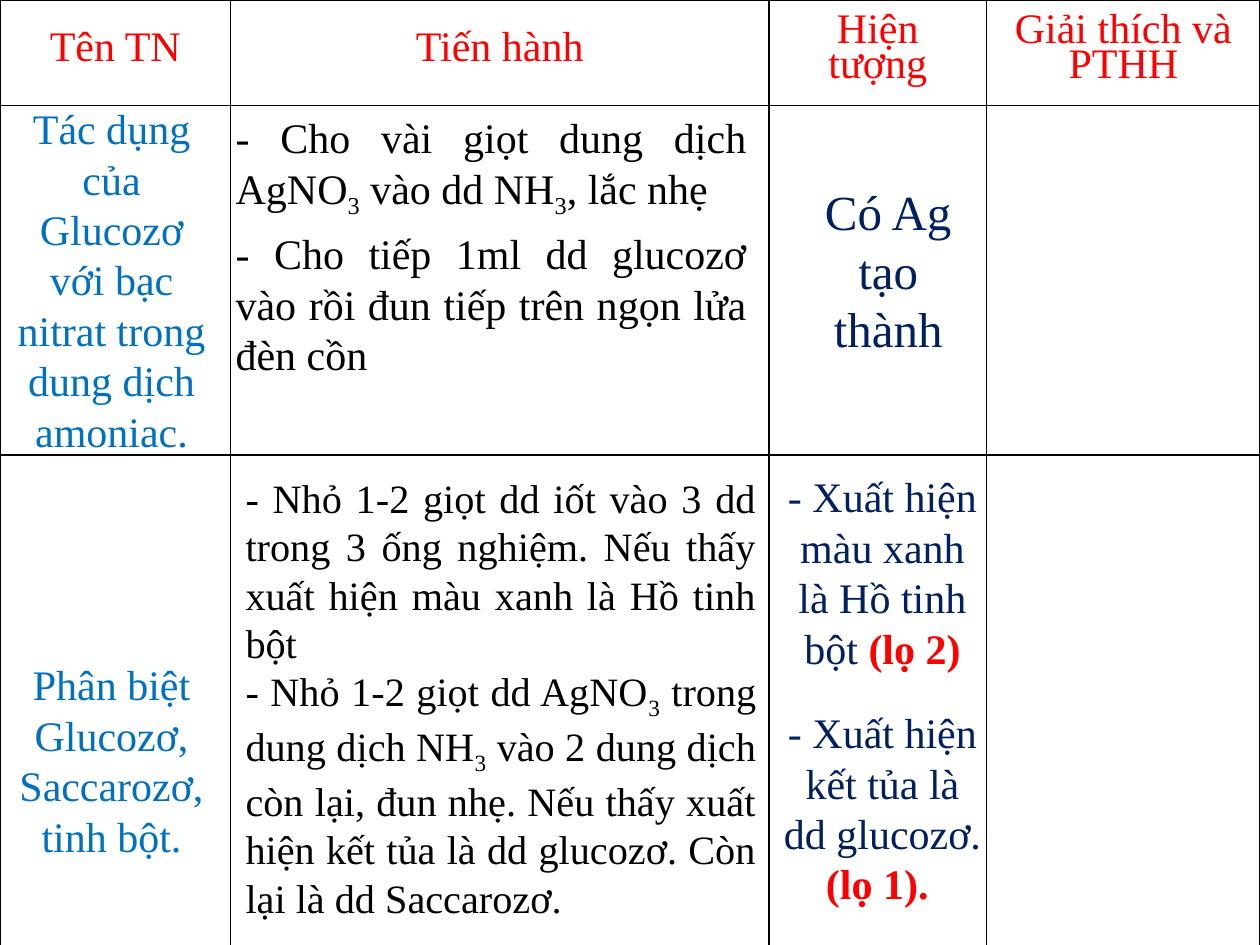
from lxml import etree
from pptx import Presentation
from pptx.dml.color import RGBColor
from pptx.enum.text import MSO_ANCHOR, MSO_AUTO_SIZE, PP_ALIGN
from pptx.oxml.ns import qn
from pptx.util import Cm, Pt

CENTER, JUSTIFY = PP_ALIGN.CENTER, PP_ALIGN.JUSTIFY
TOP, MIDDLE = MSO_ANCHOR.TOP, MSO_ANCHOR.MIDDLE
FIXED, GROW = MSO_AUTO_SIZE.NONE, MSO_AUTO_SIZE.SHAPE_TO_FIT_TEXT

FONT = "Times New Roman"
RED, BLUE, NAVY, BLACK = "FF0000", "0070C0", "002060", "000000"


def color(hex_code):
    return RGBColor.from_string(hex_code)


def add_text(para, text, size=24, ink=BLACK, bold=False):
    """Add text to a paragraph; parts between underscores are subscripts."""
    for index, part in enumerate(text.split("_")):
        span = para.add_run()
        span.text = part
        span.font.name = FONT
        span.font.size = Pt(size)
        span.font.bold = bold
        span.font.color.rgb = color(ink)
        if index % 2:
            span._r.get_or_add_rPr().set("baseline", "-25000")


class LessonPage:
    def __init__(self, page):
        self.page = page

    def fill_frame(self, frame, lines, align=CENTER, before=0, spacing=None, **style):
        for index, line in enumerate(lines):
            para = frame.add_paragraph() if index else frame.paragraphs[0]
            para.alignment = align
            if index and before:
                para.space_before = Pt(before)
            if spacing:
                para.line_spacing = Pt(spacing)
            add_text(para, line, **style)

    def text_box(self, left, top, width, height, lines, anchor=TOP, fit=GROW,
                 mark=None, **style):
        box = self.page.shapes.add_textbox(Cm(left), Cm(top), Cm(width), Cm(height))
        frame = box.text_frame
        frame.word_wrap = True
        frame.auto_size = fit
        frame.vertical_anchor = anchor
        self.fill_frame(frame, lines, **style)
        if mark:
            add_text(frame.paragraphs[-1], mark, ink=RED, bold=True)

    def border_cell(self, cell):
        properties = cell._tc.get_or_add_tcPr()
        for side in ("lnL", "lnR", "lnT", "lnB"):
            line = etree.SubElement(properties, qn(f"a:{side}"), w=str(Pt(1)))
            fill = etree.SubElement(line, qn("a:solidFill"))
            etree.SubElement(fill, qn("a:srgbClr"), val=BLACK)

    def grid(self, widths, heights, headings):
        table = self.page.shapes.add_table(
            len(heights), len(widths), 0, 0, Cm(sum(widths)), Cm(sum(heights))).table
        table.first_row = table.horz_banding = False
        for column, width in zip(table.columns, widths):
            column.width = Cm(width)
        for row, height in zip(table.rows, heights):
            row.height = Cm(height)
        for cell in table.iter_cells():
            self.border_cell(cell)
            cell.fill.background()
        for cell, lines in zip(table.rows[0].cells, headings):
            cell.vertical_anchor = MIDDLE
            cell.margin_left = cell.margin_right = Cm(0.18)
            cell.margin_top = cell.margin_bottom = 0
            self.fill_frame(cell.text_frame, lines, spacing=20, ink=RED)


def main():
    deck = Presentation()
    deck.slide_width, deck.slide_height = Cm(25.4), Cm(19.05)
    lesson = LessonPage(deck.slides.add_slide(deck.slide_layouts[6]))

    # Table grid with headings
    lesson.grid([4.65, 10.85, 4.39, 5.51], [2.13, 7.04, 9.96],
                [["Tên TN"], ["Tiến hành"], ["Hiện", "tượng"], ["Giải thích và PTHH"]])

    # Experiment names
    lesson.text_box(0, 1.93, 4.5, 7.39,
                    ["Tác dụng của Glucozơ với bạc nitrat trong dung dịch amoniac."],
                    anchor=MIDDLE, fit=FIXED, ink=BLUE)
    lesson.text_box(0, 13.16, 4.5, 4.37,
                    ["Phân biệt Glucozơ, Saccarozơ, tinh bột."], ink=BLUE)

    # Procedures
    lesson.text_box(4.5, 2.13, 10.8, 6.81, [
        "- Cho vài giọt dung dịch AgNO_3_ vào dd NH_3_, lắc nhẹ",
        "- Cho tiếp 1ml dd glucozơ vào rồi đun tiếp trên ngọn lửa đèn cồn",
    ], fit=FIXED, align=JUSTIFY, before=4.8)
    lesson.text_box(4.7, 9.42, 10.8, 9.09, [
        "- Nhỏ 1-2 giọt dd iốt vào 3 dd trong 3 ống nghiệm. Nếu thấy xuất hiện "
        "màu xanh là Hồ tinh bột",
        "- Nhỏ 1-2 giọt dd AgNO_3_ trong dung dịch NH_3_ vào 2 dung dịch còn lại, "
        "đun nhẹ. Nếu thấy xuất hiện kết tủa là dd glucozơ. Còn lại là dd Saccarozơ.",
    ], align=JUSTIFY, size=23)

    # Observations
    lesson.text_box(16.1, 3.53, 3.61, 3.84, ["Có Ag tạo thành"], size=28, ink=NAVY)
    lesson.text_box(15.49, 9.37, 4.6, 4.37,
                    ["- Xuất hiện màu xanh là Hồ tinh bột "], mark="(lọ 2)", ink=NAVY)
    lesson.text_box(15.49, 14.12, 4.6, 4.37,
                    ["- Xuất hiện kết tủa là dd glucozơ. "], mark="(lọ 1). ", ink=NAVY)

    deck.save("out.pptx")


if __name__ == "__main__":
    main()
